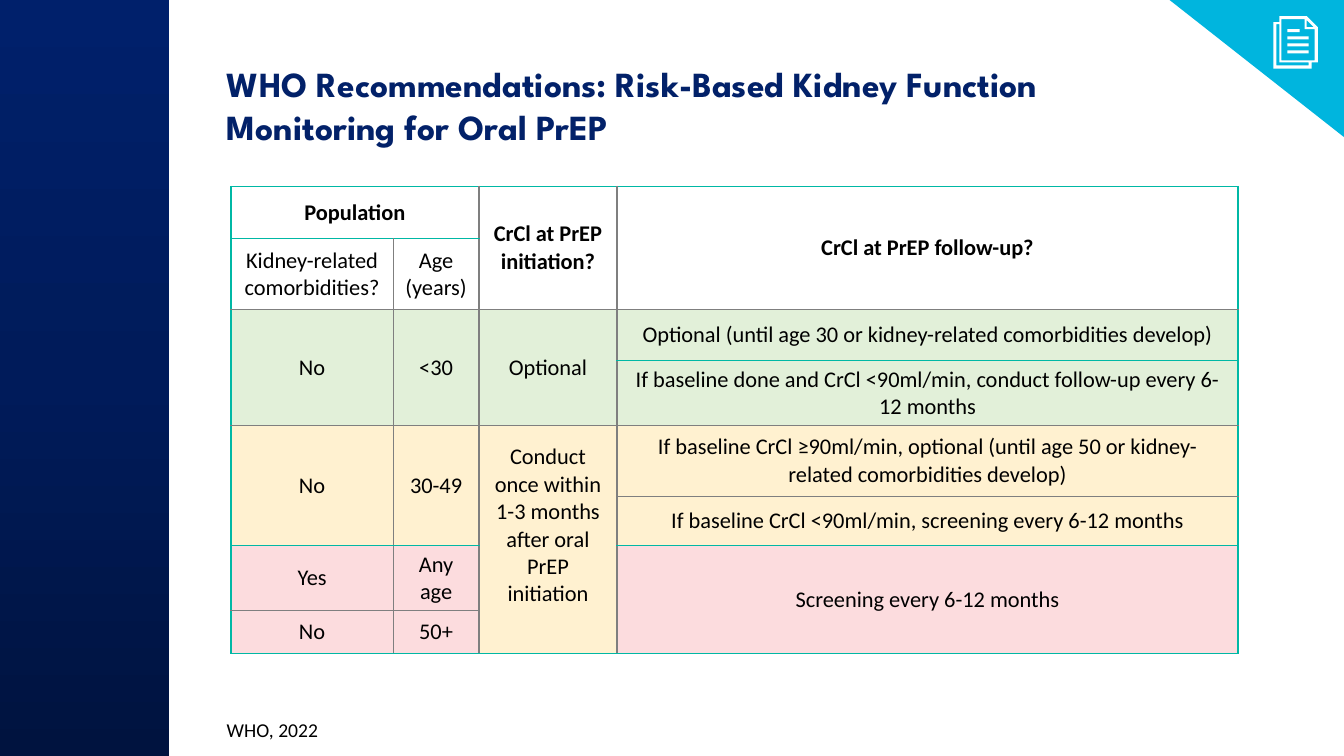
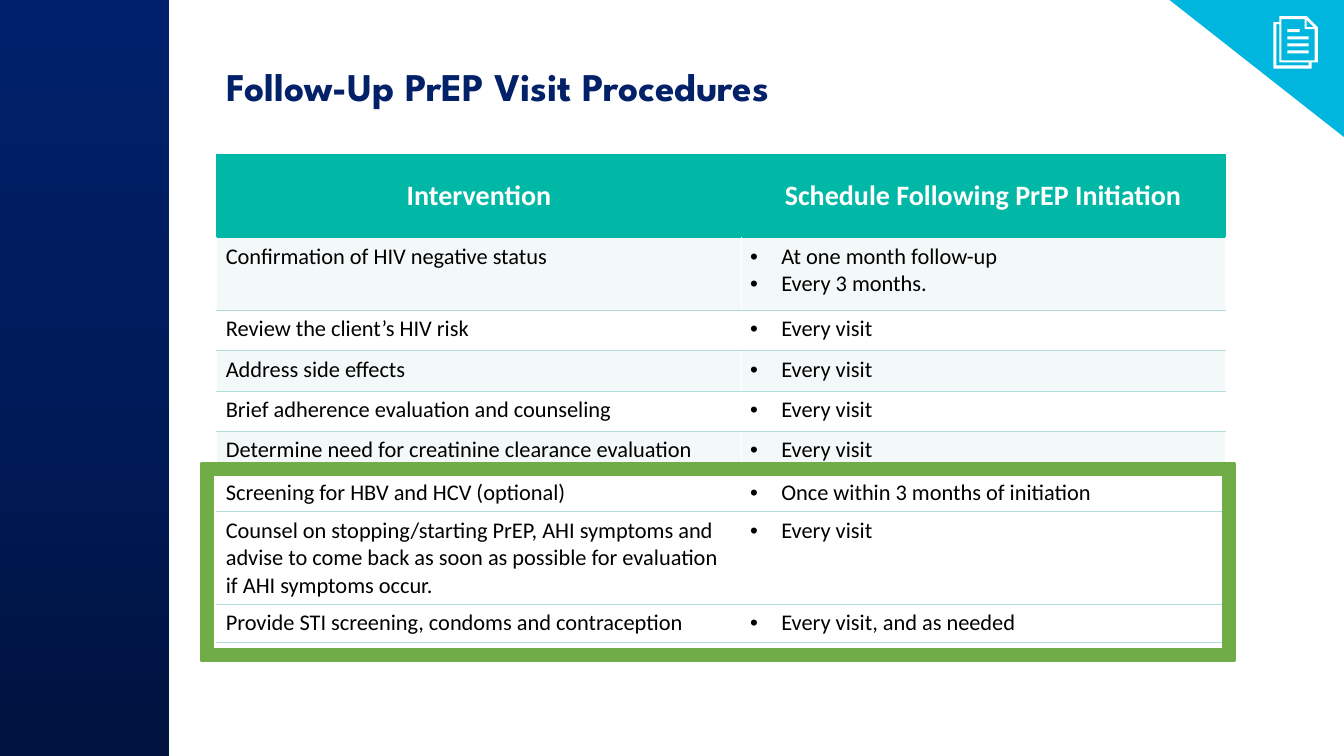
from copy import deepcopy

from lxml.etree import SubElement
from pptx import Presentation
from pptx.dml.color import RGBColor
from pptx.enum.shapes import MSO_SHAPE as Preset
from pptx.enum.text import MSO_ANCHOR as Anchor, MSO_AUTO_SIZE as AutoSize, PP_ALIGN as Align
from pptx.oxml.ns import qn
from pptx.util import Inches, Pt

BODY_FONT, TITLE_FONT = "Calibri", "League Spartan"
NAVY, CYAN, TEAL, GRAY = "022169", "00B5DE", "00B8A5", "7F7F7F"
BLACK, WHITE, FRAME_GREEN = "000000", "FFFFFF", "70AD47"
LOW_RISK, MEDIUM_RISK, HIGH_RISK = "E2F0D9", "FFF1D0", "FCDCDE"
BAND, RULE = "F2F9F8", "B0DFDB"
SIDEBAR_STOPS = ["00133F", "001B5A", "00206B"]

ICON_CONTOURS = [
    [(1269, 16), (1296, 16), (1307, 27), (1307, 62), (1301, 62), (1301, 68),
     (1263, 68), (1263, 22), (1269, 22)],
    [(1271, 19), (1294, 19), (1294, 29), (1304, 29), (1304, 60), (1271, 60)],
    [(1296, 20), (1303, 27), (1296, 27)],
    [(1266, 24), (1269, 24), (1269, 62), (1298, 62), (1298, 65), (1266, 65)],
] + [
    [(1277, top), (right, top), (right, top + 3), (1277, top + 3)]
    for top, right in [(29, 1289), (36, 1298), (43, 1298), (50, 1298)]
]

KIDNEY_COLUMNS = [1.61, 0.85, 1.37, 6.16]
KIDNEY_ROWS = [0.52, 0.7, 0.51, 0.64, 0.7, 0.49, 0.64, 0.43]
KIDNEY_GRAY_EDGES = {2, 4, 5, 7}
KIDNEY_CELLS = [
    (0, 0, 1, 2, None, ["Population"]),
    (0, 2, 2, 1, None, ["CrCl at PrEP initiation?"]),
    (0, 3, 2, 1, None, ["CrCl at PrEP follow-up?"]),
    (1, 0, 1, 1, None, ["Kidney-related comorbidities?"]),
    (1, 1, 1, 1, None, ["Age", "(years)"]),
    (2, 0, 2, 1, LOW_RISK, ["No"]),
    (2, 1, 2, 1, LOW_RISK, ["<30"]),
    (2, 2, 2, 1, LOW_RISK, ["Optional"]),
    (2, 3, 1, 1, LOW_RISK, ["Optional (until age 30 or kidney-related comorbidities develop)"]),
    (3, 3, 1, 1, LOW_RISK,
     ["If baseline done and CrCl <90ml/min, conduct follow-up every 6-12 months"]),
    (4, 0, 2, 1, MEDIUM_RISK, ["No"]),
    (4, 1, 2, 1, MEDIUM_RISK, ["30-49"]),
    (4, 2, 4, 1, MEDIUM_RISK, ["Conduct once within 1-3 months after oral PrEP initiation"]),
    (4, 3, 1, 1, MEDIUM_RISK,
     ["If baseline CrCl ≥90ml/min, optional (until age 50 or kidney-related comorbidities develop)"]),
    (5, 3, 1, 1, MEDIUM_RISK, ["If baseline CrCl <90ml/min, screening every 6-12 months"]),
    (6, 0, 1, 1, HIGH_RISK, ["Yes"]),
    (6, 1, 1, 1, HIGH_RISK, ["Any age"]),
    (6, 3, 2, 1, HIGH_RISK, ["Screening every 6-12 months"]),
    (7, 0, 1, 1, HIGH_RISK, ["No"]),
    (7, 1, 1, 1, HIGH_RISK, ["50+"]),
]

VISIT_COLUMNS = [5.2, 4.8]
VISIT_HEADERS = ["Intervention", "Schedule Following PrEP Initiation"]
VISIT_ROWS = [
    (0.72, "Confirmation of HIV negative status", ["At one month follow-up", "Every 3 months."]),
    (0.4, "Review the client’s HIV risk", ["Every visit"]),
    (0.4, "Address side effects", ["Every visit"]),
    (0.4, "Brief adherence evaluation and counseling", ["Every visit"]),
    (0.42, "Determine need for creatinine clearance evaluation", ["Every visit"]),
    (0.38, "Screening for HBV and HCV (optional)", ["Once within 3 months of initiation"]),
    (0.38, "Counsel on stopping/starting PrEP, AHI symptoms and advise to come back "
     "as soon as possible for evaluation if AHI symptoms occur.", ["Every visit"]),
    (0.38, "Provide STI screening, condoms and contraception", ["Every visit, and as needed"]),
]


def color(hex_code):
    return RGBColor.from_string(hex_code)


def add_run(paragraph, text, size, hex_code=BLACK, bold=False, font=BODY_FONT):
    run = paragraph.add_run()
    run.text = text
    run.font.name = font
    run.font.size = Pt(size)
    run.font.bold = bold
    run.font.color.rgb = color(hex_code)


def add_bullet(paragraph):
    properties = paragraph._p.get_or_add_pPr()
    properties.set("marL", str(Inches(0.31)))
    properties.set("indent", str(-Inches(0.31)))
    SubElement(properties, qn("a:buFont"), typeface="Arial")
    SubElement(properties, qn("a:buChar"), char="•")


def write_lines(text_frame, lines, size, hex_code=BLACK, bold=False, align=Align.LEFT, bullets=False):
    for index, line in enumerate(lines):
        paragraph = text_frame.add_paragraph() if index else text_frame.paragraphs[0]
        paragraph.alignment = align
        if bullets:
            add_bullet(paragraph)
        add_run(paragraph, line, size, hex_code, bold)


def style_shape(shape, hex_code):
    shape.shadow.inherit = False
    shape.fill.solid()
    shape.fill.fore_color.rgb = color(hex_code)
    shape.line.fill.background()


def add_preset(slide, preset, box, hex_code):
    shape = slide.shapes.add_shape(preset, *map(Inches, box))
    style_shape(shape, hex_code)
    return shape


def add_sidebar(slide):
    sidebar = add_preset(slide, Preset.RECTANGLE, (0, 0, 1.68, 7.5), NAVY)
    sidebar.fill.gradient()
    sidebar.fill.gradient_angle = 90
    first_stop = next(sidebar._element.spPr.iter(qn("a:gs")))
    middle_stop = deepcopy(first_stop)
    middle_stop.set("pos", "50000")
    first_stop.addnext(middle_stop)
    for stop, hex_code in zip(sidebar.fill.gradient_stops, SIDEBAR_STOPS):
        stop.color.rgb = color(hex_code)


def add_document_icon(slide):
    first, *others = ICON_CONTOURS
    builder = slide.shapes.build_freeform(*first[0], scale=Inches(0.01))
    builder.add_line_segments(first[1:], close=True)
    for contour in others:
        builder.move_to(*contour[0])
        builder.add_line_segments(contour[1:], close=True)
    style_shape(builder.convert_to_shape(), WHITE)


def add_base_slide(presentation, title_text, title_size):
    slide = presentation.slides.add_slide(presentation.slide_layouts[5])
    add_sidebar(slide)
    title = slide.shapes.title
    title.left, title.top, title.width, title.height = map(Inches, (2.15, 0.57, 10, 0.92))
    frame = title.text_frame
    frame.word_wrap = True
    frame.auto_size = AutoSize.NONE
    frame.vertical_anchor = Anchor.TOP
    paragraph = frame.paragraphs[0]
    paragraph.alignment = Align.LEFT
    add_run(paragraph, title_text, title_size, NAVY, True, TITLE_FONT)
    corner = add_preset(slide, Preset.RIGHT_TRIANGLE, (11.6, 0, 1.73, 1.36), CYAN)
    corner.rotation = 180
    add_document_icon(slide)
    return slide


def add_plain_table(slide, left, top, widths, heights):
    frame = slide.shapes.add_table(len(heights), len(widths), *map(
        Inches, (left, top, sum(widths), sum(heights))))
    table = frame.table
    table.first_row = table.horz_banding = False
    for column, width in zip(table.columns, widths):
        column.width = Inches(width)
    for row, height in zip(table.rows, heights):
        row.height = Inches(height)
    return table


def style_cell(cell, fill, edges, width=1):
    properties = cell._tc.get_or_add_tcPr()
    for side, hex_code in zip("LRTB", edges):
        line = SubElement(properties, qn(f"a:ln{side}"), w=str(Pt(width)))
        SubElement(SubElement(line, qn("a:solidFill")), qn("a:srgbClr"), val=hex_code)
    if fill:
        cell.fill.solid()
        cell.fill.fore_color.rgb = color(fill)
    else:
        cell.fill.background()


def row_edge(index):
    return GRAY if index in KIDNEY_GRAY_EDGES else TEAL


def column_edge(index):
    return TEAL if index in (0, len(KIDNEY_COLUMNS)) else GRAY


def add_kidney_table(slide):
    table = add_plain_table(slide, 2.29, 1.85, KIDNEY_COLUMNS, KIDNEY_ROWS)
    for row, column, row_span, column_span, fill, lines in KIDNEY_CELLS:
        cell = table.cell(row, column)
        last_row, last_column = row + row_span, column + column_span
        if row_span * column_span > 1:
            cell.merge(table.cell(last_row - 1, last_column - 1))
        edges = (column_edge(column), column_edge(last_column), row_edge(row), row_edge(last_row))
        for covered_row in range(row, last_row):
            for covered_column in range(column, last_column):
                style_cell(table.cell(covered_row, covered_column), fill, edges)
        cell.vertical_anchor = Anchor.MIDDLE
        write_lines(cell.text_frame, lines, 16, bold=row == 0, align=Align.CENTER)
    table.cell(4, 2).margin_bottom = Inches(0.33)


def add_visit_table(slide):
    heights = [0.83] + [height for height, *_ in VISIT_ROWS]
    table = add_plain_table(slide, 2.15, 1.53, VISIT_COLUMNS, heights)
    for column, header in enumerate(VISIT_HEADERS):
        cell = table.cell(0, column)
        style_cell(cell, TEAL, [TEAL] * 4)
        cell.vertical_anchor = Anchor.MIDDLE
        write_lines(cell.text_frame, [header], 20, WHITE, True, Align.CENTER)
    for row, (_, intervention, schedule) in enumerate(VISIT_ROWS, 1):
        top_edge = TEAL if row == 1 else RULE
        for column, lines in enumerate(([intervention], schedule)):
            cell = table.cell(row, column)
            fill = BAND if row in (1, 3, 5) else WHITE
            style_cell(cell, fill, (WHITE, WHITE, top_edge, RULE), 0.83)
            cell.margin_left = cell.margin_right = Inches(0.09)
            write_lines(cell.text_frame, lines, 16, bullets=column == 1)


def add_source_note(slide, text):
    box = slide.shapes.add_textbox(*map(Inches, (2.15, 7.07, 2.28, 0.34)))
    box.text_frame.word_wrap = True
    write_lines(box.text_frame, [text], 14)


def add_highlight_frame(slide):
    frame = add_preset(slide, Preset.FRAME, (2, 4.6, 10.24, 1.95), FRAME_GREEN)
    frame.adjustments[0] = 0.05
    frame.line.color.rgb = color(FRAME_GREEN)
    frame.line.width = Pt(3)


def main():
    presentation = Presentation()
    presentation.slide_width, presentation.slide_height = Inches(13.33), Inches(7.5)

    slide = add_base_slide(
        presentation, "WHO Recommendations: Risk-Based Kidney Function Monitoring for Oral PrEP", 25.2)
    add_kidney_table(slide)
    add_source_note(slide, "WHO, 2022")

    slide = add_base_slide(presentation, "Follow-Up PrEP Visit Procedures", 28)
    add_visit_table(slide)
    add_highlight_frame(slide)

    presentation.save("out.pptx")


if __name__ == "__main__":
    main()
